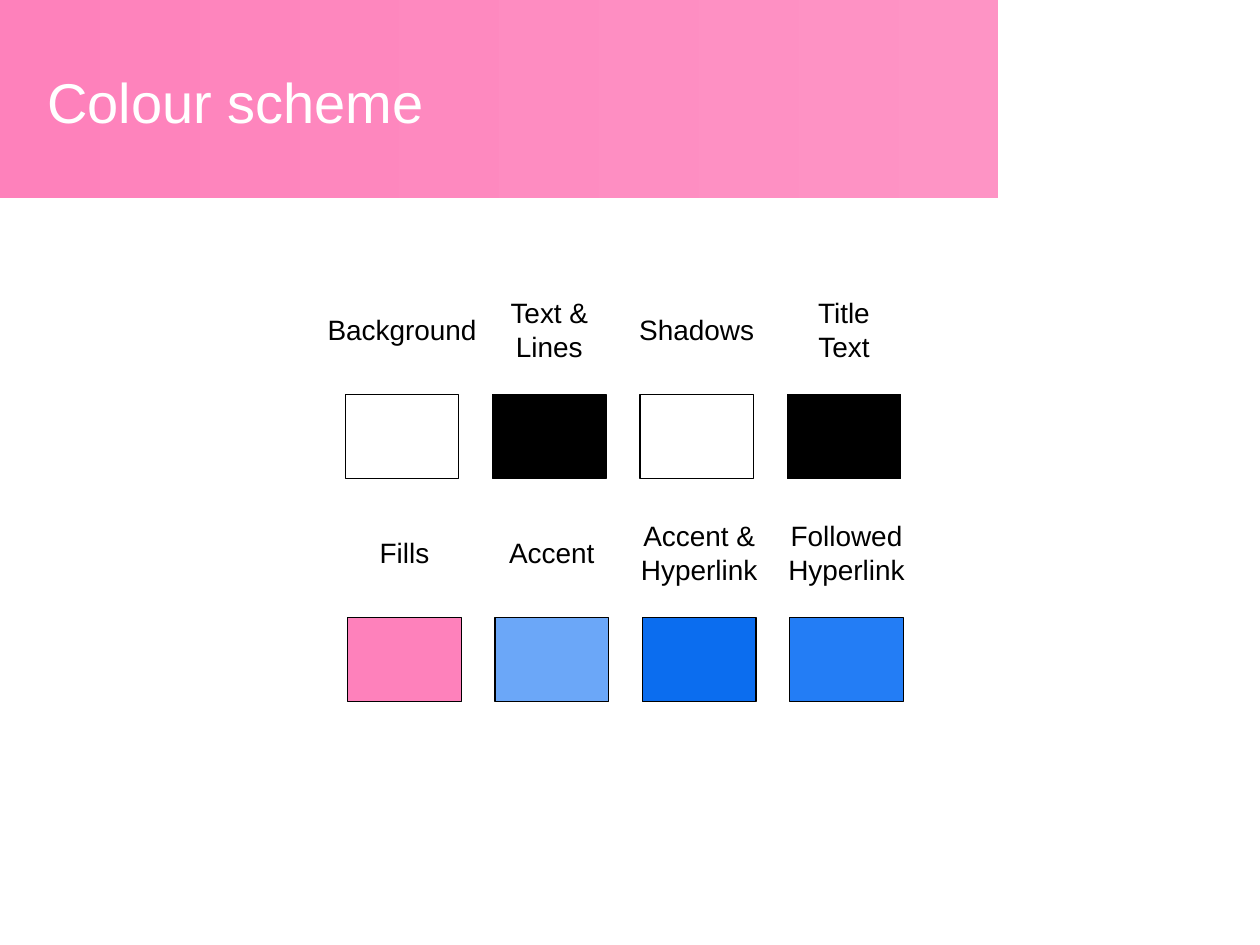
from pptx import Presentation
from pptx.dml.color import RGBColor
from pptx.enum.shapes import MSO_SHAPE
from pptx.enum.text import MSO_ANCHOR, PP_ALIGN
from pptx.util import Cm, Pt

WHITE = RGBColor(0xFF, 0xFF, 0xFF)
BLACK = RGBColor(0x00, 0x00, 0x00)
PINK = RGBColor(0xFE, 0x81, 0xBB)
PALE_PINK = RGBColor(0xFE, 0x94, 0xC5)
LIGHT_BLUE = RGBColor(0x6B, 0xA7, 0xF8)
DEEP_BLUE = RGBColor(0x0B, 0x6D, 0xEF)
BLUE = RGBColor(0x23, 0x7D, 0xF5)

# Content: each row has its left and top (cm), then label lines and colour
TITLE = "Colour scheme"
ROWS = [
    (6.96, 7.95, [
        (["Background"], WHITE),
        (["Text &", "Lines"], BLACK),
        (["Shadows"], WHITE),
        (["Title", "Text"], BLACK),
    ]),
    (7.01, 12.45, [
        (["Fills"], PINK),
        (["Accent"], LIGHT_BLUE),
        (["Accent &", "Hyperlink"], DEEP_BLUE),
        (["Followed", "Hyperlink"], BLUE),
    ]),
]

# Grid, in cm
PITCH = 2.97
SWATCH_W, SWATCH_H = 2.29, 1.7
LABEL_W, LABEL_H = 3.8, 1.63
LABEL_RISE = 2.13  # from label top to swatch top

prs = Presentation()
prs.slide_width, prs.slide_height = Cm(25.4), Cm(19.05)
slide = prs.slides.add_slide(prs.slide_layouts[6])


def add_rect(left, top, width, height):
    rect = slide.shapes.add_shape(
        MSO_SHAPE.RECTANGLE, Cm(left), Cm(top), Cm(width), Cm(height))
    rect.shadow.inherit = False
    return rect


def add_text(left, top, width, height, lines, size, color, align):
    frame = slide.shapes.add_textbox(
        Cm(left), Cm(top), Cm(width), Cm(height)).text_frame
    frame.word_wrap = True
    frame.vertical_anchor = MSO_ANCHOR.MIDDLE
    for i, line in enumerate(lines):
        paragraph = frame.add_paragraph() if i else frame.paragraphs[0]
        paragraph.alignment = align
        run = paragraph.add_run()
        run.text = line
        run.font.name = "Arial"
        run.font.size = Pt(size)
        run.font.color.rgb = color


# Title band
band = add_rect(0, 0, 20.13, 4)
band.line.fill.background()
band.fill.gradient()
band.fill.gradient_angle = 0
for stop, color in zip(band.fill.gradient_stops, (PINK, PALE_PINK)):
    stop.color.rgb = color
add_text(0.7, 0.76, 19, 2.57, [TITLE], 32, WHITE, PP_ALIGN.LEFT)

# Swatches with centred labels above
for row_left, top, swatches in ROWS:
    for column, (lines, color) in enumerate(swatches):
        left = row_left + column * PITCH
        swatch = add_rect(left, top, SWATCH_W, SWATCH_H)
        swatch.fill.solid()
        swatch.fill.fore_color.rgb = color
        swatch.line.color.rgb = BLACK
        swatch.line.width = Pt(0.75)
        add_text(left + (SWATCH_W - LABEL_W) / 2, top - LABEL_RISE,
                 LABEL_W, LABEL_H, lines, 16, BLACK, PP_ALIGN.CENTER)

prs.save("out.pptx")
